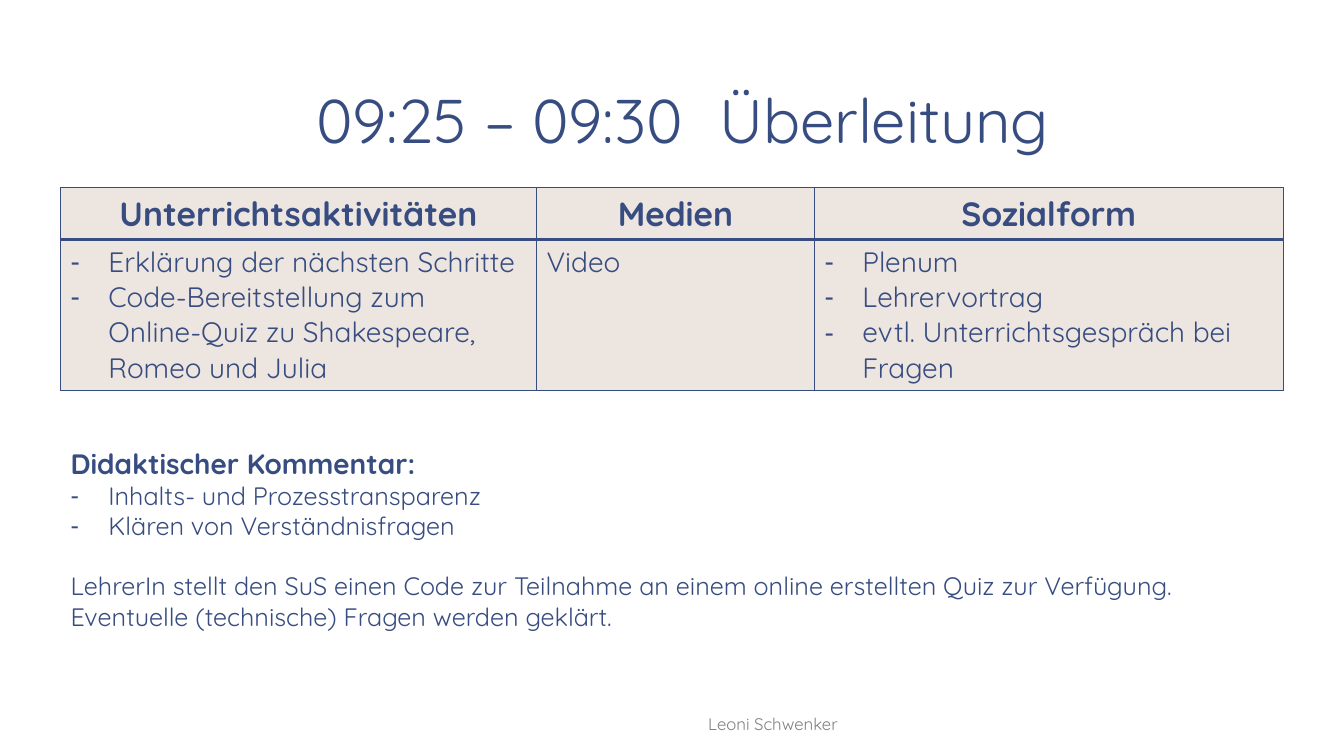
from lxml import etree
from pptx import Presentation
from pptx import util as u
from pptx.dml import color
from pptx.enum import text
from pptx.oxml import ns

Pt = u.Pt
FONT = "Quicksand"
NAVY, SAND, GRAY, WHITE = "374C81", "EDE5DF", "808080", "FFFFFF"
CENTER, LEFT = text.PP_ALIGN.CENTER, text.PP_ALIGN.LEFT
INDENT = 27
HEADERS = ["Unterrichtsaktivitäten", "Medien", "Sozialform"]
PLAN = [
    (["Erklärung der nächsten Schritte",
      "Code-Bereitstellung zum Online-Quiz zu Shakespeare, Romeo und Julia"], True),
    (["Video"], False),
    (["Plenum", "Lehrervortrag", "evtl. Unterrichtsgespräch bei Fragen"], True),
]
COMMENT = [
    ("Didaktischer Kommentar:", 20, True, False, 0),
    ("Inhalts- und Prozesstransparenz", 18, False, True, 0),
    ("Klären von Verständnisfragen", 18, False, True, 0),
    ("LehrerIn stellt den SuS einen Code zur Teilnahme an einem online erstellten Quiz "
     "zur Verfügung. Eventuelle (technische) Fragen werden geklärt.", 18, False, False, 21.5),
]


def paint(fill, value):
    """Make a fill solid in a hex colour."""
    fill.solid()
    fill.fore_color.rgb = color.RGBColor.from_string(value)


def style(para, size, value=NAVY, bold=False, align=LEFT):
    """Format the alignment and the runs of a paragraph."""
    para.alignment = align
    for span in para.runs:
        span.font.name = FONT
        span.font.size = Pt(size)
        span.font.bold = bold
        paint(span.font.fill, value)


def set_bullet(para, dashed):
    """Give a paragraph a hanging dash, or no bullet and no indent."""
    props = para._p.get_or_add_pPr()
    indent = Pt(INDENT) if dashed else 0
    props.set("marL", str(indent))
    props.set("indent", str(-indent))
    if dashed:
        etree.SubElement(props, ns.qn("a:buFont")).set("typeface", "Arial")
        etree.SubElement(props, ns.qn("a:buChar")).set("char", "-")
    else:
        etree.SubElement(props, ns.qn("a:buNone"))


def set_borders(cell, widths):
    """Draw the left, right, top and bottom borders of a cell."""
    props = cell._tc.get_or_add_tcPr()
    for index, (side, width) in enumerate(zip("LRTB", widths)):
        line = etree.Element(ns.qn(f"a:ln{side}"), w=str(Pt(width)))
        solid = etree.SubElement(line, ns.qn("a:solidFill"))
        etree.SubElement(solid, ns.qn("a:srgbClr"), val=NAVY)
        props.insert(index, line)


def place(shape, left, top, width, height):
    """Position a shape, with lengths in points."""
    shape.left, shape.top = Pt(left), Pt(top)
    shape.width, shape.height = Pt(width), Pt(height)


def set_frame(frame, anchor, side, edge):
    """Set wrapping, anchor and insets of a text frame."""
    frame.word_wrap = True
    frame.auto_size = text.MSO_AUTO_SIZE.NONE
    frame.vertical_anchor = anchor
    frame.margin_left = frame.margin_right = Pt(side)
    frame.margin_top = frame.margin_bottom = Pt(edge)


def add_title(page):
    """Fill the title placeholder."""
    title = page.shapes.title
    place(title, 87.8, 6.2, 800, 110)
    set_frame(title.text_frame, text.MSO_ANCHOR.BOTTOM, 9.4, 5)
    title.text_frame.text = "09:25 – 09:30\tÜberleitung"
    para = title.text_frame.paragraphs[0]
    para.line_spacing = 0.85
    style(para, 44, align=CENTER)


def add_plan(page):
    """Add the lesson plan table."""
    table = page.shapes.add_table(2, 3, Pt(43.2), Pt(133.9), Pt(873.4), Pt(145)).table
    table.first_row = table.horz_banding = False
    for column, width in zip(table.columns, (340, 198.6, 334.8)):
        column.width = Pt(width)
    for row, height in zip(table.rows, (37.2, 107.8)):
        row.height = Pt(height)
    for index, (header, (lines, dashed)) in enumerate(zip(HEADERS, PLAN)):
        top, body = table.cell(0, index), table.cell(1, index)
        top.text = header
        style(top.text_frame.paragraphs[0], 24, bold=True, align=CENTER)
        body.text = "\n".join(lines)
        body.margin_right = Pt(11)
        for para in body.text_frame.paragraphs:
            set_bullet(para, dashed)
            style(para, 20)
        for cell, widths in ((top, (1, 1, 1, 2)), (body, (1, 1, 2, 1))):
            paint(cell.fill, SAND)
            set_borders(cell, widths)


def add_comment(page):
    """Fill the body placeholder with the teaching comment."""
    body = page.placeholders[1]
    place(body, 43.2, 315.4, 873.4, 140.4)
    set_frame(body.text_frame, text.MSO_ANCHOR.TOP, 7.2, 3.6)
    body.text_frame.text = "\n".join(entry[0] for entry in COMMENT)
    for para, (_, size, bold, dashed, before) in zip(body.text_frame.paragraphs, COMMENT):
        para.space_before = Pt(before)
        set_bullet(para, dashed)
        style(para, size, bold=bold)


def add_footer(page):
    """Add the author's name at the bottom."""
    box = page.shapes.add_textbox(Pt(307.4), Pt(504), Pt(489.6), Pt(25.2))
    set_frame(box.text_frame, text.MSO_ANCHOR.BOTTOM, 9.4, 5)
    box.text_frame.text = "Leoni Schwenker"
    style(box.text_frame.paragraphs[0], 12, GRAY, align=CENTER)


def main():
    """Build and save the deck."""
    deck = Presentation()
    deck.slide_width, deck.slide_height = Pt(960), Pt(540)
    page = deck.slides.add_slide(deck.slide_layouts[1])
    paint(page.background.fill, WHITE)
    add_title(page)
    add_plan(page)
    add_comment(page)
    add_footer(page)
    deck.save("out.pptx")


if __name__ == "__main__":
    main()
